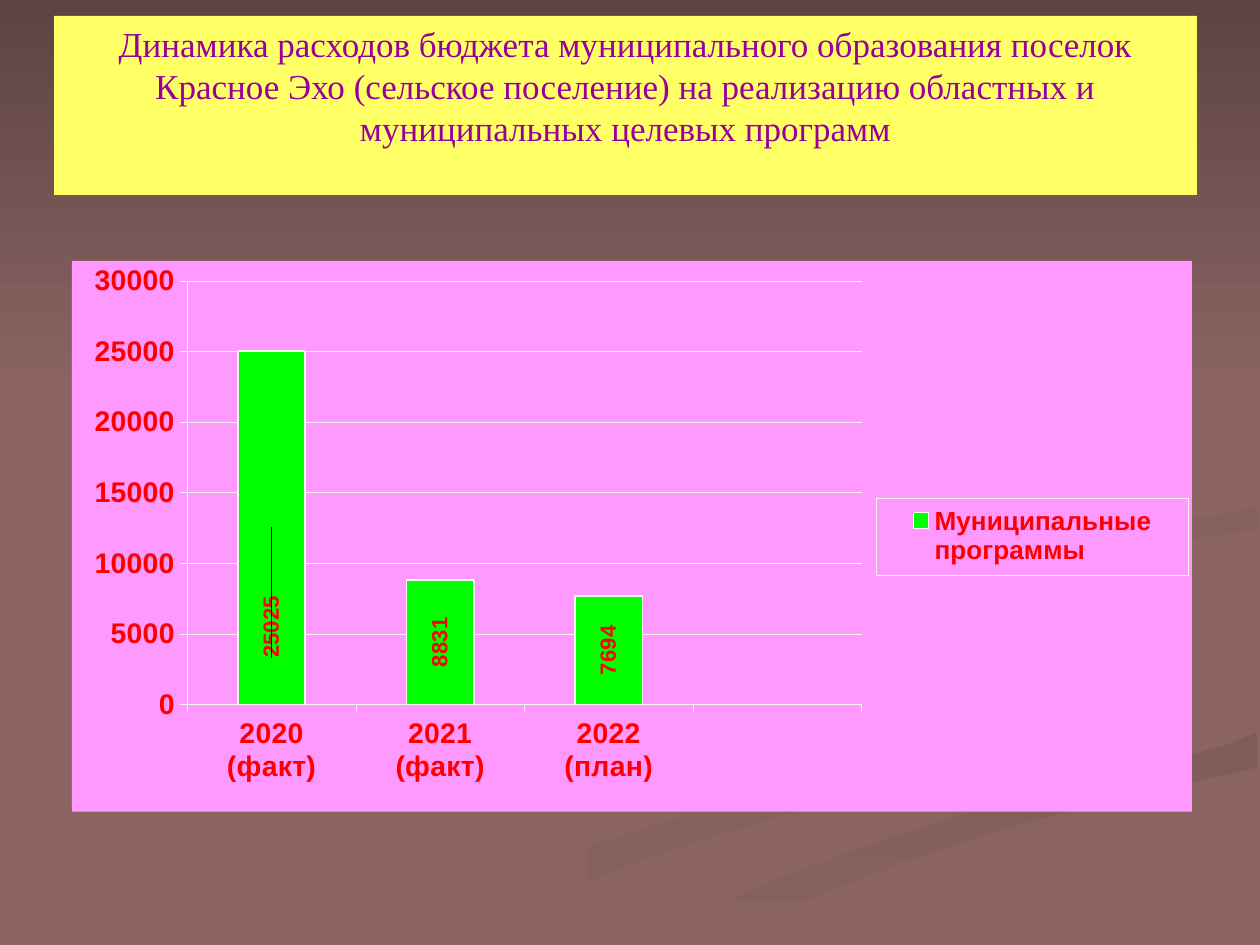
import pptx
import pptx.chart.data
import pptx.dml.color
import pptx.enum.chart
import pptx.enum.text
import pptx.oxml
import pptx.oxml.ns
import pptx.util
from pptx.util import Cm, Pt

COLORS = {
    "background": "8A6362", "top": "5E4444", "ribbon": "845F5E", "ribbon dark": "7F5B5A",
    "ribbon right": "825E5D", "title fill": "FFFF66", "title": "990099", "chart fill": "FF99FF",
    "bar": "00FF00", "text": "FF0000", "line": "F7F3F3",
}
TITLE = ("Динамика расходов бюджета муниципального образования поселок Красное Эхо "
         "(сельское поселение) на реализацию областных и муниципальных целевых программ")
SERIES = "Муниципальные программы"
# category, value, downward shift of the label as a share of the chart height
BARS = [("2020 (факт)", 25025, 0.18), ("2021 (факт)", 8831, 0), ("2022 (план)", 7694, 0),
        ("", None, 0)]

# Outlines in cm, then start colour, end colour and clockwise angle
RIBBONS = [
    ([(19.84, 14.05), (18.92, 13.67), (17.32, 13.18), (15.9, 12.75), (15.09, 12.32),
      (14.63, 11.91), (14.61, 11.66), (14.48, 11.89), (14.63, 12.09), (15.06, 12.47),
      (16.03, 12.83), (17.7, 13.34), (18.82, 13.7), (19.71, 14.05), (19.96, 14.38),
      (19.81, 14.71), (19.28, 14.99), (18.47, 15.29), (17.37, 15.57), (15.65, 15.98),
      (13.69, 16.48), (11.63, 17.12), (9.55, 17.96), (7.62, 19.02), (9.17, 19.02),
      (10.95, 18.14), (12.67, 17.45), (14.33, 16.89), (15.82, 16.43), (17.75, 15.95),
      (19.2, 15.6), (19.96, 15.27), (20.24, 14.94), (20.29, 14.55), (20.12, 14.25)],
     "background", "ribbon", 0),
    ([(12.78, 19.02), (14.5, 19.02), (15.24, 18.62), (16, 18.26), (17.02, 17.83),
      (18.34, 17.32), (19.94, 16.79), (21.87, 16.26), (24.1, 15.75), (25.35, 15.47),
      (25.35, 14.76), (24.79, 14.99), (23.77, 15.29), (22.02, 15.75), (19.41, 16.43),
      (17.68, 16.99), (16, 17.6), (14.45, 18.26), (13.18, 18.97)],
     "ribbon dark", "background", 90),
    ([(19.84, 11.68), (19.86, 11.91), (20.24, 12.27), (20.98, 12.6), (20.62, 12.37),
      (20.45, 12.09), (20.55, 11.84), (21.03, 11.51), (21.82, 11.25), (22.76, 11.05),
      (24.23, 10.82), (25.35, 10.67), (25.35, 10.21), (24.56, 10.39), (22.81, 10.62),
      (21.56, 10.85), (20.57, 11.1), (20.09, 11.35)],
     "ribbon right", "background", 45),
    ([(0, 0), (0, 7.82), (25.4, 7.82), (25.4, 0)], "top", "background", 90),
]


def rgb(name):
    return pptx.dml.color.RGBColor.from_string(COLORS[name])


def paint(fill, name):
    fill.solid()
    fill.fore_color.rgb = rgb(name)


def set_font(font, size, color="text", name="Arial", bold=True):
    font.size, font.name, font.bold = Pt(size), name, bold
    font.color.rgb = rgb(color)


def set_line(line, width):
    line.width = Pt(width)
    paint(line.fill, "line")


def chart_xml(body):
    return pptx.oxml.parse_xml(body.replace(">", f" {pptx.oxml.ns.nsdecls('c', 'a')}>", 1))


def set_layout(element, index, **values):
    """Replace the manual layout of a chart part; modes come first, as the schema asks."""
    for old in element.findall(pptx.oxml.ns.qn("c:layout")):
        element.remove(old)
    body = "".join(f'<c:{key} val="{value}"/>' for key, value in values.items())
    element.insert(index, chart_xml(
        f"<c:layout><c:manualLayout>{body}</c:manualLayout></c:layout>"))


def add_ribbon(slide, points, start, end, angle):
    corners = [(Cm(x), Cm(y)) for x, y in points]
    builder = slide.shapes.build_freeform(*corners[0])
    builder.add_line_segments(corners[1:], close=True)
    shape = builder.convert_to_shape()
    shape.shadow.inherit = False
    shape.line.fill.background()
    shape.fill.gradient()
    shape.fill.gradient_angle = (360 - angle) % 360
    for stop, color in zip(shape.fill.gradient_stops, (start, end)):
        stop.color.rgb = rgb(color)


def add_text(slide, text, box, fill, **font):
    shape = slide.shapes.add_textbox(*(Cm(length) for length in box))
    paint(shape.fill, fill)
    frame = shape.text_frame
    frame.word_wrap = True
    paragraph = frame.paragraphs[0]
    paragraph.alignment = pptx.enum.text.PP_ALIGN.CENTER
    run = paragraph.add_run()
    run.text = text
    set_font(run.font, **font)


def style_axis(axis):
    set_font(axis.tick_labels.font, 16.2)
    axis.major_tick_mark = pptx.enum.chart.XL_TICK_MARK.OUTSIDE
    axis.minor_tick_mark = pptx.enum.chart.XL_TICK_MARK.NONE
    set_line(axis.format.line, 0.23)


def add_bar_label(point, shift):
    label = point.data_label
    set_font(label.font, 12.6)
    label.position = pptx.enum.chart.XL_LABEL_POSITION.CENTER
    element = label._dLbl
    body = element.find(".//" + pptx.oxml.ns.qn("a:bodyPr"))
    body.set("rot", "-5400000")
    body.set("vert", "horz")
    if shift:
        set_layout(element, 1, x=0, y=shift)


def add_chart(slide):
    data = pptx.chart.data.CategoryChartData()
    data.categories = [bar[0] for bar in BARS]
    data.add_series(SERIES, [bar[1] for bar in BARS])
    chart = slide.shapes.add_chart(
        pptx.enum.chart.XL_CHART_TYPE.COLUMN_CLUSTERED,
        Cm(1.45), Cm(5.26), Cm(22.58), Cm(11.1), data).chart
    chart.has_title = False
    set_font(chart.font, 16.2, "line")
    chart._chartSpace.find(pptx.oxml.ns.qn("c:txPr")).addprevious(chart_xml(
        f'<c:spPr><a:solidFill><a:srgbClr val="{COLORS["chart fill"]}"/></a:solidFill>'
        "<a:ln><a:noFill/></a:ln></c:spPr>"))
    set_layout(chart._chartSpace.chart.plotArea, 0, layoutTarget="inner", xMode="edge",
               yMode="edge", x=0.103, y=0.036, w=0.602, h=0.77)

    for axis in (chart.category_axis, chart.value_axis):
        style_axis(axis)
    chart.category_axis.tick_label_position = pptx.enum.chart.XL_TICK_LABEL_POSITION.LOW
    chart.value_axis.minimum_scale = 0
    chart.value_axis.maximum_scale = 30000
    chart.value_axis.major_unit = 5000
    set_line(chart.value_axis.major_gridlines.format.line, 0.23)

    plot = chart.plots[0]
    plot.gap_width = 150
    plot.vary_by_categories = False
    series = plot.series[0]
    paint(series.format.fill, "bar")
    set_line(series.format.line, 0.9)
    for index, (_, value, shift) in enumerate(BARS):
        if value is not None:
            add_bar_label(series.points[index], shift)

    chart.has_legend = True
    legend = chart.legend
    legend.position = pptx.enum.chart.XL_LEGEND_POSITION.RIGHT
    legend.include_in_layout = False
    set_font(legend.font, 14.9)
    set_layout(legend._element, 1, xMode="edge", yMode="edge", x=0.718, y=0.43, w=0.279, h=0.14)
    legend._element.find(pptx.oxml.ns.qn("c:txPr")).addprevious(chart_xml(
        f'<c:spPr><a:noFill/><a:ln w="2900"><a:solidFill><a:srgbClr val="{COLORS["line"]}"/>'
        "</a:solidFill></a:ln></c:spPr>"))


def main():
    presentation = pptx.Presentation()
    presentation.slide_width, presentation.slide_height = Cm(25.4), Cm(19.05)
    slide = presentation.slides.add_slide(presentation.slide_layouts[6])
    paint(slide.background.fill, "background")
    for ribbon in RIBBONS:
        add_ribbon(slide, *ribbon)
    add_text(slide, TITLE, (1.09, 0.32, 23.04, 3.61), "title fill",
             size=20, color="title", name="Times New Roman", bold=False)
    add_chart(slide)
    presentation.save("out.pptx")


if __name__ == "__main__":
    main()
